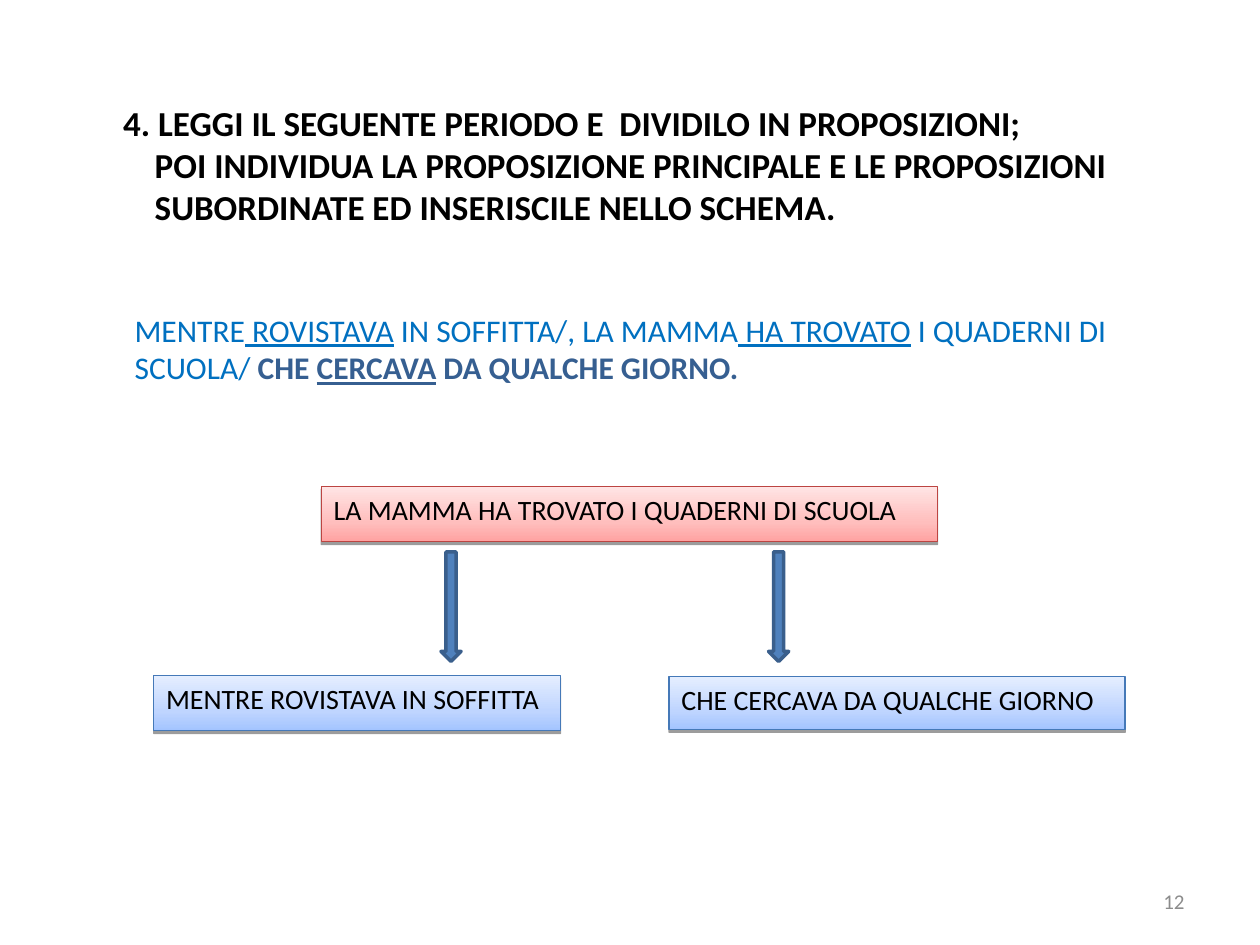
from dataclasses import dataclass

from lxml.etree import SubElement
from pptx import Presentation
from pptx.dml.color import RGBColor
from pptx.enum.shapes import MSO_SHAPE as Shape
from pptx.enum.text import MSO_ANCHOR as Anchor, MSO_AUTO_SIZE as AutoSize, PP_ALIGN as Align
from pptx.oxml.ns import qn
from pptx.util import Emu, Inches, Pt

COLS, ROWS = 100, 75

prs = Presentation()
prs.slide_width, prs.slide_height = Inches(10), Inches(7.5)
s = prs.slides.add_slide(prs.slide_layouts[6])


@dataclass(frozen=True)
class Area:
    col: float
    row: float
    cols: float
    rows: float

    def emu(self) -> tuple[Emu, Emu, Emu, Emu]:
        w, h = prs.slide_width / COLS, prs.slide_height / ROWS
        return (Emu(round(self.col * w)), Emu(round(self.row * h)),
                Emu(round(self.cols * w)), Emu(round(self.rows * h)))


@dataclass(frozen=True)
class Run:
    text: str
    color: str = "000000"
    bold: bool = False
    underline: bool = False


@dataclass(frozen=True)
class Palette:
    stops: tuple[tuple[int, str], ...]
    line: str


@dataclass(frozen=True)
class Clause:
    area: Area
    text: str
    palette: Palette


def rgb(value: str) -> RGBColor:
    return RGBColor.from_string(value)


def add_runs(p, runs: list[Run], size: float) -> None:
    for run in runs:
        r = p.add_run()
        r.text = run.text
        r.font.name, r.font.size = "Calibri", Pt(size)
        r.font.bold, r.font.underline = run.bold, run.underline
        r.font.color.rgb = rgb(run.color)


def add_text(area: Area, lines: list[list[Run]], size: float, wrap: bool = False,
             align: Align = Align.LEFT, indent: float = 0) -> None:
    tf = s.shapes.add_textbox(*area.emu()).text_frame
    tf.word_wrap = wrap
    tf.auto_size = AutoSize.NONE if wrap else AutoSize.SHAPE_TO_FIT_TEXT
    tf.vertical_anchor = Anchor.MIDDLE
    for i, runs in enumerate(lines):
        p = tf.add_paragraph() if i else tf.paragraphs[0]
        p.alignment = align
        if i and indent:
            p._p.get_or_add_pPr().set("marL", str(Inches(indent)))
        add_runs(p, runs, size)


def add_color(parent, value: str):
    return SubElement(parent, qn("a:srgbClr"), val=value)


def add_clause(clause: Clause) -> None:
    sp = s.shapes.add_shape(Shape.RECTANGLE, *clause.area.emu())
    sp.fill.gradient()
    sp.fill.gradient_angle = 90
    stops = sp._element.spPr.find(".//" + qn("a:gsLst"))
    for old in list(stops):
        stops.remove(old)
    for pos, value in clause.palette.stops:
        add_color(SubElement(stops, qn("a:gs"), pos=str(pos * 1000)), value)
    sp.line.color.rgb, sp.line.width = rgb(clause.palette.line), Pt(0.75)
    sp.shadow.inherit = False
    effects = sp._element.spPr.find(qn("a:effectLst"))
    shadow = SubElement(effects, qn("a:outerShdw"), blurRad="0", dist=str(Pt(1.6)),
                        dir="5400000", rotWithShape="0")
    SubElement(add_color(shadow, "000000"), qn("a:alpha"), val="38000")
    tf = sp.text_frame
    tf.word_wrap, tf.vertical_anchor = True, Anchor.TOP
    p = tf.paragraphs[0]
    p.alignment, p.space_after = Align.LEFT, Pt(10)
    add_runs(p, [Run(clause.text)], 16)


def add_arrow(area: Area) -> None:
    sp = s.shapes.add_shape(Shape.DOWN_ARROW, *area.emu())
    sp.shadow.inherit = False
    sp.fill.solid()
    sp.fill.fore_color.rgb = rgb("4F81BD")
    sp.line.color.rgb, sp.line.width = rgb("3A5F8C"), Pt(2)


MAIN = Palette(((0, "FFA2A1"), (35, "FFBEBD"), (100, "FFE5E5")), "BC4542")
SUBORDINATE = Palette(((0, "A3C4FF"), (35, "BFD5FF"), (100, "E5EEFF")), "4579B8")
BLUE, NAVY = "0070C0", "365F91"

TASK = [
    "4. LEGGI IL SEGUENTE PERIODO E  DIVIDILO IN PROPOSIZIONI;",
    "POI INDIVIDUA LA PROPOSIZIONE PRINCIPALE E LE PROPOSIZIONI",
    "SUBORDINATE ED INSERISCILE NELLO SCHEMA.",
]
SENTENCE = [
    [Run("MENTRE", BLUE), Run(" ROVISTAVA", BLUE, underline=True),
     Run(" IN SOFFITTA/, LA MAMMA", BLUE), Run(" HA TROVATO", BLUE, underline=True),
     Run(" I QUADERNI DI", BLUE)],
    [Run("SCUOLA/ ", BLUE), Run("CHE ", NAVY, True), Run("CERCAVA", NAVY, True, True),
     Run(" DA QUALCHE GIORNO.", NAVY, True)],
]
CLAUSES = [
    Clause(Area(25.5, 38.6, 48.9, 4.4), "LA MAMMA HA TROVATO I QUADERNI DI SCUOLA", MAIN),
    Clause(Area(12.2, 53.6, 32.3, 4.4), "MENTRE ROVISTAVA IN SOFFITTA", SUBORDINATE),
    Clause(Area(53.1, 53.7, 36.2, 4.2), "CHE CERCAVA DA QUALCHE GIORNO", SUBORDINATE),
]

add_text(Area(8.8, 7.5, 81.3, 11.1), [[Run(line, bold=True)] for line in TASK], 20, indent=0.25)
add_text(Area(9.7, 24.1, 80.4, 7.1), SENTENCE, 18)
for clause in CLAUSES:
    add_clause(clause)
for col in (35, 61):
    add_arrow(Area(col, 43.8, 1.6, 8.7))
add_text(Area(71.7, 69.5, 23.3, 4), [[Run("12", "8C8C8C")]], 12, wrap=True, align=Align.RIGHT)

prs.save("out.pptx")
